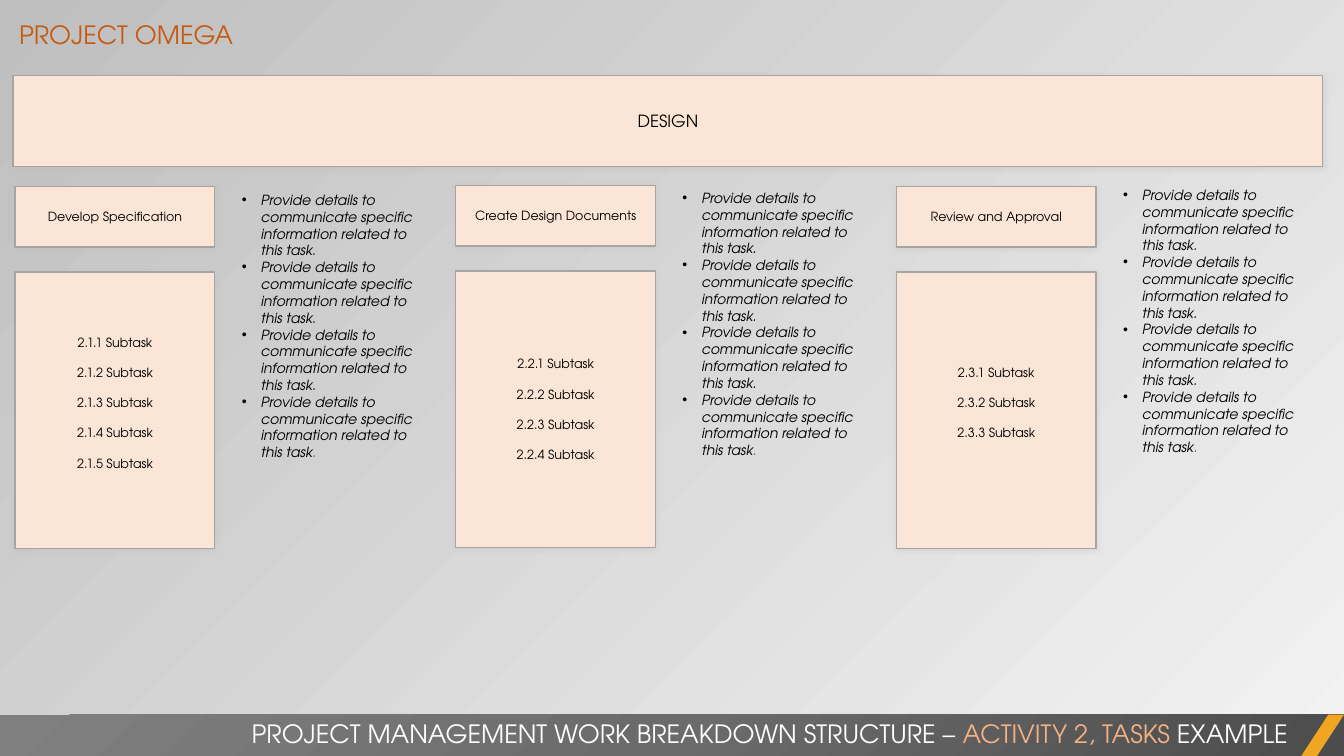
from dataclasses import dataclass

from pptx import Presentation
from pptx.dml.color import RGBColor
from pptx.enum.shapes import MSO_SHAPE
from pptx.enum.text import MSO_ANCHOR, MSO_AUTO_SIZE, PP_ALIGN
from pptx.oxml.ns import qn
from pptx.oxml.xmlchemy import OxmlElement
from pptx.util import Inches, Pt

FONT = "TeX Gyre Adventor"
COLORS = {
    "panel": "FBE5D6", "edge": "A5A5A5", "shadow": "BFBFBF",
    "text": "000000", "white": "FFFFFF", "heading": "C55A11",
    "peach": "F4B183", "gold": "F0A622", "stop": "2E75B6",
    "bg_light": "F2F2F2", "bg_dark": "BFBFBF",
    "band_dark": "4C4C4C", "band_mid": "6B6B6B", "band_light": "808080",
}

# Grid, in inches
SLIDE_W, SLIDE_H = 13.33, 7.5
COL_LEFT, COL_PITCH, BOX_W = 0.15, 4.37, 1.98
NOTE_OFFSET, NOTE_W, NOTE_H = 2.15, 2.06, 3.0
TASK_ROW, TASK_H = 1.85, 0.6
SUBTASK_ROW, SUBTASK_H = 2.7, 2.74
BAND_TOP, BAND_H = 7.09, 0.42
LINE_GAP = 10.8  # points between subtasks
BULLET_INDENT = 0.19
DETAIL = "Provide details to communicate specific information related to this task"
DETAIL_COUNT = 4


@dataclass(frozen=True)
class Area:
    left: float
    top: float
    width: float
    height: float

    def emu(self) -> tuple:
        return tuple(Inches(v) for v in (self.left, self.top, self.width, self.height))


@dataclass(frozen=True)
class Run:
    text: str
    size: float
    color: str = "text"
    italic: bool = False


@dataclass(frozen=True)
class Task:
    name: str
    number: str
    subtasks: int
    box_lift: float = 0.0
    note_lift: float = 0.0
    bottom_inset: float = 0.05


TASKS = [
    Task("Develop Specification", "2.1", 5, bottom_inset=0.2),
    Task("Create Design Documents", "2.2", 4, box_lift=0.01, note_lift=0.02),
    Task("Review and Approval", "2.3", 3, note_lift=0.05, bottom_inset=0.2),
]


def rgb(name: str) -> RGBColor:
    return RGBColor.from_string(COLORS[name])


def child(parent, tag: str, **attrs):
    """Append a new XML element with the given attributes."""
    el = OxmlElement(tag)
    for key, value in attrs.items():
        el.set(key, str(value))
    parent.append(el)
    return el


def add_runs(p, runs: list[Run]) -> None:
    for run in runs:
        r = p.add_run()
        r.text = run.text
        r.font.name = FONT
        r.font.size = Pt(run.size)
        r.font.italic = run.italic
        r.font.color.rgb = rgb(run.color)


def fill_text(tf, lines: list[list[Run]], align: PP_ALIGN, gap: float = 0) -> None:
    tf.word_wrap = True
    for i, runs in enumerate(lines):
        p = tf.add_paragraph() if i else tf.paragraphs[0]
        p.alignment = align
        if i and gap:
            p.space_before = Pt(gap)
        add_runs(p, runs)


def add_plain(slide, kind: MSO_SHAPE, area: Area, color: str):
    sp = slide.shapes.add_shape(kind, *area.emu())
    sp.shadow.inherit = False
    sp.fill.solid()
    sp.fill.fore_color.rgb = rgb(color)
    sp.line.fill.background()
    return sp


def add_panel(slide, area: Area, lines: list[list[Run]], bottom_inset: float = 0.05) -> None:
    """Outlined box with a soft shadow and centred lines of text."""
    sp = add_plain(slide, MSO_SHAPE.RECTANGLE, area, "panel")
    sp.line.color.rgb = rgb("edge")
    sp.line.width = Pt(1)
    effects = sp._element.spPr.find(qn("a:effectLst"))
    shadow = child(effects, "a:outerShdw", blurRad=Pt(4), dist=Pt(1),
                   dir=90 * 60000, algn="t", rotWithShape=0)
    color = child(shadow, "a:srgbClr", val=COLORS["shadow"])
    child(color, "a:alpha", val=40000)
    tf = sp.text_frame
    tf.vertical_anchor = MSO_ANCHOR.MIDDLE
    tf.margin_bottom = Inches(bottom_inset)
    fill_text(tf, lines, PP_ALIGN.CENTER, LINE_GAP)


def add_text(slide, area: Area, lines: list[list[Run]], align: PP_ALIGN = PP_ALIGN.LEFT):
    tf = slide.shapes.add_textbox(*area.emu()).text_frame
    fill_text(tf, lines, align)
    tf.auto_size = MSO_AUTO_SIZE.SHAPE_TO_FIT_TEXT
    return tf


def add_notes(slide, area: Area) -> None:
    lines = [[Run(DETAIL + ".", 10, italic=True)] for _ in range(DETAIL_COUNT - 1)]
    lines.append([Run(DETAIL, 10, italic=True), Run(".", 10, "stop", True)])
    tf = add_text(slide, area, lines)
    for p in tf.paragraphs:
        pPr = p._p.get_or_add_pPr()
        pPr.set("marL", str(Inches(BULLET_INDENT)))
        pPr.set("indent", str(-Inches(BULLET_INDENT)))
        child(pPr, "a:buFont", typeface="Arial")
        child(pPr, "a:buChar", char="•")


def add_task(slide, column: int, task: Task) -> None:
    left = COL_LEFT + column * COL_PITCH
    add_panel(slide, Area(left, TASK_ROW - task.box_lift, BOX_W, TASK_H),
              [[Run(task.name, 9)]])
    subtasks = [[Run(f"{task.number}.{n} Subtask", 9)] for n in range(1, task.subtasks + 1)]
    add_panel(slide, Area(left, SUBTASK_ROW - task.box_lift, BOX_W, SUBTASK_H),
              subtasks, task.bottom_inset)
    add_notes(slide, Area(left + NOTE_OFFSET, TASK_ROW - task.note_lift, NOTE_W, NOTE_H))


def paint_background(slide) -> None:
    fill = slide.background.fill
    fill.gradient()
    fill.gradient_angle = 135
    for stop, color in zip(fill.gradient_stops, ("bg_light", "bg_dark")):
        stop.color.rgb = rgb(color)


def add_band(slide) -> None:
    """Footer bar with a radial gradient centred on its bottom right corner."""
    sp = add_plain(slide, MSO_SHAPE.RECTANGLE,
                   Area(0, BAND_TOP, SLIDE_W, BAND_H), "band_mid")
    solid = sp._element.spPr.find(qn("a:solidFill"))
    grad = OxmlElement("a:gradFill")
    stops = child(grad, "a:gsLst")
    for pos, color in ((0, "band_dark"), (50, "band_mid"), (100, "band_light")):
        child(child(stops, "a:gs", pos=pos * 1000), "a:srgbClr", val=COLORS[color])
    radial = child(grad, "a:path", path="circle")
    child(radial, "a:fillToRect", l=100000, t=100000)
    solid.getparent().replace(solid, grad)


def main() -> None:
    prs = Presentation()
    prs.slide_width, prs.slide_height = Inches(SLIDE_W), Inches(SLIDE_H)
    slide = prs.slides.add_slide(prs.slide_layouts[6])
    paint_background(slide)

    add_band(slide)
    accent = add_plain(slide, MSO_SHAPE.PARALLELOGRAM,
                       Area(12.9, BAND_TOP, 0.43, BAND_H), "gold")
    accent.adjustments[0] = 0.652
    add_text(slide, Area(0, 7.08, 12.87, 0.4), [[
        Run("PROJECT MANAGEMENT WORK BREAKDOWN STRUCTURE – ", 18, "white"),
        Run("ACTIVITY 2, TASKS ", 18, "peach"),
        Run("EXAMPLE", 18, "white"),
    ]], PP_ALIGN.RIGHT)

    add_text(slide, Area(0.09, 0.14, 10.11, 0.4), [[Run("PROJECT OMEGA", 18, "heading")]])
    add_panel(slide, Area(0.13, 0.75, 12.99, 0.9), [[Run("DESIGN", 12)]])
    for column, task in enumerate(TASKS):
        add_task(slide, column, task)

    prs.save("out.pptx")


if __name__ == "__main__":
    main()
